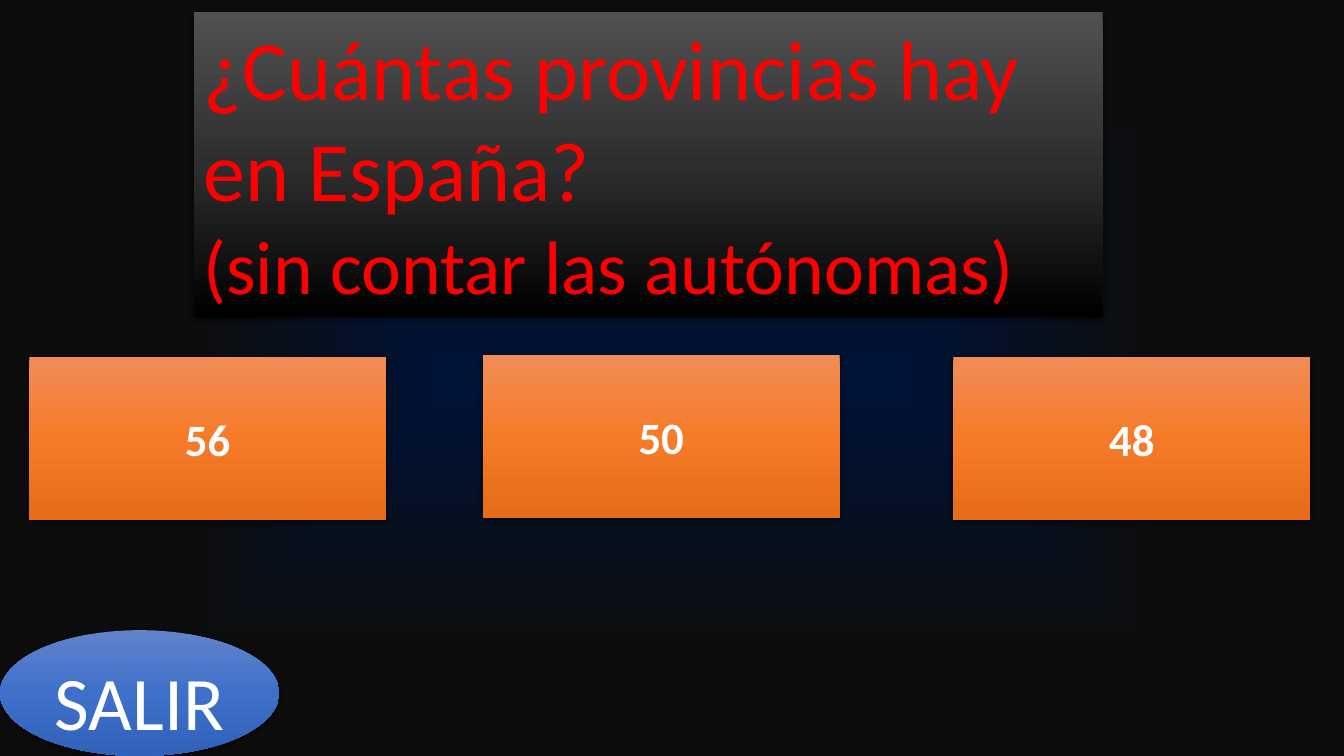
"""Build a quiz slide asking how many provinces Spain has."""
from pptx import Presentation
from pptx.enum.shapes import MSO_SHAPE
from pptx.enum.text import MSO_ANCHOR, PP_ALIGN
from pptx.dml.color import RGBColor
from pptx.oxml import parse_xml
from pptx.oxml.ns import nsdecls, qn
from pptx.util import Cm, Pt

QUESTION = [("¿Cuántas provincias hay en España?", 60), ("(sin contar las autónomas)", 54)]
ANSWERS = [("56", 0.74, 8.99), ("50", 12.17, 8.94), ("48", 24.03, 8.99)]
ANSWER_SIZE = (8.99, 4.11)
EXIT_LABEL = "SALIR"
COLOURS = {"question": "FF0000", "label": "FFFFFF", "shadow": "000000"}
GRADIENTS = {
    "background": [(0, "001338", 88), (72, "0D0D0D", 100)],
    "exit": [(0, "6183CB", 100), (50, "3E70CA", 100), (100, "3062BB", 100)],
    "question": [(0, "515151", 100), (50, "2E2E2E", 100), (100, "000000", 100)],
    "answer": [(0, "F18C57", 100), (50, "F67B28", 100), (100, "E56C19", 100)],
}
DOWNWARD = '<a:lin {ns} ang="5400000" scaled="0"/>'
FROM_CENTRE = ('<a:path {ns} path="shape">'
               '<a:fillToRect l="50000" t="50000" r="50000" b="50000"/></a:path>')


def set_gradient(fill, owner, stops, direction):
    fill.gradient()
    gradient = owner.find(".//" + qn("a:gradFill"))
    for child in list(gradient):
        gradient.remove(child)
    stop_xml = "".join(
        f'<a:gs pos="{position * 1000}"><a:srgbClr val="{colour}">'
        f'<a:alpha val="{opacity * 1000}"/></a:srgbClr></a:gs>'
        for position, colour, opacity in stops)
    gradient.append(parse_xml(f'<a:gsLst {nsdecls("a")}>{stop_xml}</a:gsLst>'))
    gradient.append(parse_xml(direction.format(ns=nsdecls("a"))))


def add_panel(slide, outline, box, gradient):
    panel = slide.shapes.add_shape(outline, *(Cm(length) for length in box))
    set_gradient(panel.fill, panel.element, GRADIENTS[gradient], DOWNWARD)
    panel.line.fill.background()
    panel.shadow.inherit = False
    panel.element.spPr.find(qn("a:effectLst")).append(parse_xml(
        f'<a:outerShdw {nsdecls("a")} blurRad="57150" dist="19050" dir="5400000" '
        f'algn="ctr" rotWithShape="0"><a:srgbClr val="{COLOURS["shadow"]}">'
        '<a:alpha val="63000"/></a:srgbClr></a:outerShdw>'))
    panel.text_frame.word_wrap = True
    return panel.text_frame


def format_run(run, size, colour, bold=False):
    run.font.name = "Calibri"
    run.font.size = Pt(size)
    run.font.bold = bold
    run.font.color.rgb = RGBColor.from_string(COLOURS[colour])


def main():
    deck = Presentation()
    deck.slide_width, deck.slide_height = Cm(33.87), Cm(19.05)
    slide = deck.slides.add_slide(deck.slide_layouts[6])
    set_gradient(slide.background.fill, slide.element, GRADIENTS["background"], FROM_CENTRE)

    exit_text = add_panel(slide, MSO_SHAPE.OVAL, (0, 15.88, 7.04, 3.17), "exit")
    exit_text.vertical_anchor = MSO_ANCHOR.MIDDLE
    exit_line = exit_text.paragraphs[0]
    exit_line.alignment = PP_ALIGN.CENTER
    for words, size in [(EXIT_LABEL, 54), (" ", 66)]:
        run = exit_line.add_run()
        run.text = words
        format_run(run, size, "label")

    question = add_panel(slide, MSO_SHAPE.RECTANGLE, (4.88, 0.3, 22.91, 7.7), "question")
    question.vertical_anchor = MSO_ANCHOR.TOP
    question.text = "\n".join(words for words, _ in QUESTION)
    for line, (_, size) in zip(question.paragraphs, QUESTION):
        line.alignment = PP_ALIGN.LEFT
        format_run(line.runs[0], size, "question")

    for number, left, top in ANSWERS:
        answer = add_panel(slide, MSO_SHAPE.RECTANGLE, (left, top, *ANSWER_SIZE), "answer")
        answer.vertical_anchor = MSO_ANCHOR.MIDDLE
        answer.text = number
        answer.paragraphs[0].alignment = PP_ALIGN.CENTER
        format_run(answer.paragraphs[0].runs[0], 32, "label", bold=True)

    deck.save("out.pptx")


if __name__ == "__main__":
    main()
